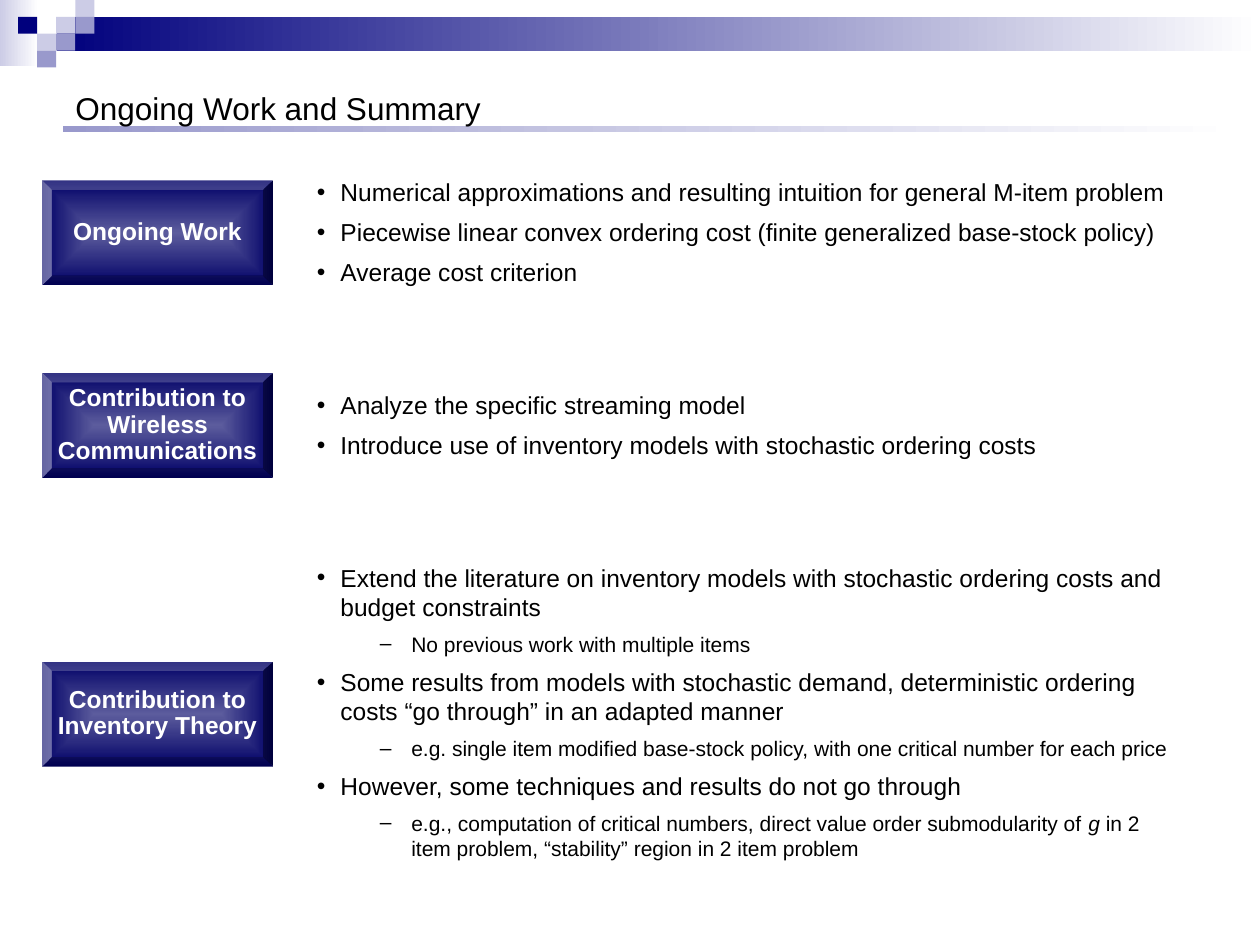
from dataclasses import dataclass

from lxml.etree import SubElement
from pptx import Presentation
from pptx.dml.color import RGBColor
from pptx.enum.shapes import MSO_SHAPE as Preset
from pptx.enum.text import MSO_ANCHOR as Anchor, MSO_AUTO_SIZE as AutoSize, PP_ALIGN as Align
from pptx.oxml.ns import qn
from pptx.util import Pt

COLORS = {
    "navy": "00007D",
    "periwinkle": "9999CC",
    "lavender": "CCCCE6",
    "badge_center": "5C5C9D",
    "badge_edge": "000066",
    "white": "FFFFFF",
    "black": "000000",
}
FONT = "Arial"
TILE_LEFT, TILE_WIDTH, TILE_HEIGHT = 10.3, 10.9, 9.65
BADGE_LEFT, BADGE_WIDTH, BADGE_HEIGHT = 24, 132, 60
LIST_LEFT = 174


@dataclass(frozen=True)
class Band:
    left: float
    top: float
    width: float
    height: float
    color: str


@dataclass(frozen=True)
class Tile:
    column: int
    row: int
    color: str


@dataclass(frozen=True)
class BulletStyle:
    mark: str
    size: float
    margin: float
    hanging: float
    space_before: float


@dataclass(frozen=True)
class Bullet:
    before: str
    level: int = 0
    italic: str = ""
    after: str = ""


@dataclass(frozen=True)
class Section:
    label: str
    middle: float
    list_width: float
    list_height: float
    insets: tuple[float, float, float, float]
    bullets: tuple[Bullet, ...]


STYLES = (
    BulletStyle("•", 14, 13.5, 13.5, 6),
    BulletStyle("–", 12, 54, 18, 5.5),
)

BANDS = (
    Band(0, 0, 22, 38, "lavender"),
    Band(32.4, 9.65, 687.6, 19.3, "navy"),
    Band(36, 72, 672, 3.4, "periwinkle"),
)

TILES = (
    Tile(2, 1, "lavender"),
    Tile(3, 0, "lavender"),
    Tile(3, 1, "periwinkle"),
    Tile(1, 2, "lavender"),
    Tile(0, 1, "navy"),
    Tile(2, 2, "periwinkle"),
    Tile(1, 3, "periwinkle"),
)

BADGE_INSETS = (2.88, 3.6, 2.88, 4.3)

SECTIONS = (
    Section("Contribution to Inventory Theory", 408, 504, 180, BADGE_INSETS, (
        Bullet("Extend the literature on inventory models with stochastic ordering costs "
               "and budget constraints"),
        Bullet("No previous work with multiple items", 1),
        Bullet("Some results from models with stochastic demand, deterministic ordering "
               "costs “go through” in an adapted manner"),
        Bullet("e.g. single item modified base-stock policy, with one critical number "
               "for each price", 1),
        Bullet("However, some techniques and results do not go through"),
        Bullet("e.g., computation of critical numbers, direct value order submodularity of ",
               1, "g", " in 2 item problem, “stability” region in 2 item problem"),
    )),
    Section("Contribution to Wireless Communications", 243, 504, 47.5, (0, 0, 0, 0), (
        Bullet("Analyze the specific streaming model"),
        Bullet("Introduce use of inventory models with stochastic ordering costs"),
    )),
    Section("Ongoing Work", 133, 516, 70.5, BADGE_INSETS, (
        Bullet("Numerical approximations and resulting intuition for general M-item problem"),
        Bullet("Piecewise linear convex ordering cost (finite generalized base-stock policy)"),
        Bullet("Average cost criterion"),
    )),
)


def rgb(name: str) -> RGBColor:
    return RGBColor.from_string(COLORS[name])


def format_span(span, size: float, color: str = "black", bold: bool = False) -> None:
    span.font.name = FONT
    span.font.size = Pt(size)
    span.font.bold = bold
    span.font.color.rgb = rgb(color)


def add_plain_shape(page, preset, left: float, top: float, width: float, height: float):
    shape = page.shapes.add_shape(preset, Pt(left), Pt(top), Pt(width), Pt(height))
    shape.shadow.inherit = False
    shape.line.fill.background()
    return shape


def fill_gradient(shape, start: str, end: str) -> None:
    shape.fill.gradient()
    shape.fill.gradient_angle = 0
    for stop, color, position in zip(shape.fill.gradient_stops, (start, end), (0, 1)):
        stop.color.rgb = rgb(color)
        stop.position = position


def center_gradient(shape) -> None:
    gradient = shape.fill._xPr.find(qn("a:gradFill"))
    gradient.remove(gradient.find(qn("a:lin")))
    shade = SubElement(gradient, qn("a:path"), {"path": "rect"})
    SubElement(shade, qn("a:fillToRect"), {side: "50000" for side in "ltrb"})


def draw_band(page, band: Band) -> None:
    shape = add_plain_shape(page, Preset.RECTANGLE, band.left, band.top, band.width, band.height)
    fill_gradient(shape, band.color, "white")


def draw_tile(page, tile: Tile) -> None:
    shape = add_plain_shape(page, Preset.RECTANGLE, TILE_LEFT + tile.column * TILE_WIDTH,
                            tile.row * TILE_HEIGHT, TILE_WIDTH, TILE_HEIGHT)
    shape.fill.solid()
    shape.fill.fore_color.rgb = rgb(tile.color)


def draw_title(page, text: str) -> None:
    box = page.shapes.add_textbox(Pt(36), Pt(28), Pt(648), Pt(48))
    frame = box.text_frame
    frame.word_wrap = True
    frame.vertical_anchor = Anchor.BOTTOM
    frame.text = text
    format_span(frame.paragraphs[0].runs[0], 18)


def write_bullet(para, bullet: Bullet) -> None:
    style = STYLES[bullet.level]
    para.level = bullet.level
    para.space_before = Pt(style.space_before)
    properties = para._p.get_or_add_pPr()
    properties.set("marL", str(Pt(style.margin)))
    properties.set("indent", str(-Pt(style.hanging)))
    SubElement(properties, qn("a:buFont"), {"typeface": FONT})
    SubElement(properties, qn("a:buChar"), {"char": style.mark})
    para.text = bullet.before
    for text in filter(None, (bullet.italic, bullet.after)):
        para.add_run().text = text
    for span in para.runs:
        format_span(span, style.size)
        span.font.italic = span.text == bullet.italic


def draw_section(page, section: Section) -> None:
    box = page.shapes.add_textbox(Pt(LIST_LEFT), Pt(section.middle - section.list_height / 2),
                                  Pt(section.list_width), Pt(section.list_height))
    frame = box.text_frame
    frame.word_wrap = True
    frame.auto_size = AutoSize.SHAPE_TO_FIT_TEXT
    for index, bullet in enumerate(section.bullets):
        write_bullet(frame.add_paragraph() if index else frame.paragraphs[0], bullet)

    badge = add_plain_shape(page, Preset.BEVEL, BADGE_LEFT, section.middle - BADGE_HEIGHT / 2,
                            BADGE_WIDTH, BADGE_HEIGHT)
    badge.adjustments[0] = 0.09
    fill_gradient(badge, "badge_center", "badge_edge")
    center_gradient(badge)
    label = badge.text_frame
    label.word_wrap = True
    label.vertical_anchor = Anchor.MIDDLE
    label.margin_left, label.margin_top, label.margin_right, label.margin_bottom = map(
        Pt, section.insets)
    label.text = section.label
    para = label.paragraphs[0]
    para.alignment = Align.CENTER
    para.line_spacing = 0.9
    format_span(para.runs[0], 14, "white", True)


def main() -> None:
    deck = Presentation()
    deck.slide_width, deck.slide_height = Pt(720), Pt(540)
    page = deck.slides.add_slide(deck.slide_layouts[6])
    for band in BANDS:
        draw_band(page, band)
    for tile in TILES:
        draw_tile(page, tile)
    draw_title(page, "Ongoing Work and Summary")
    for section in SECTIONS:
        draw_section(page, section)
    deck.save("out.pptx")


if __name__ == "__main__":
    main()
